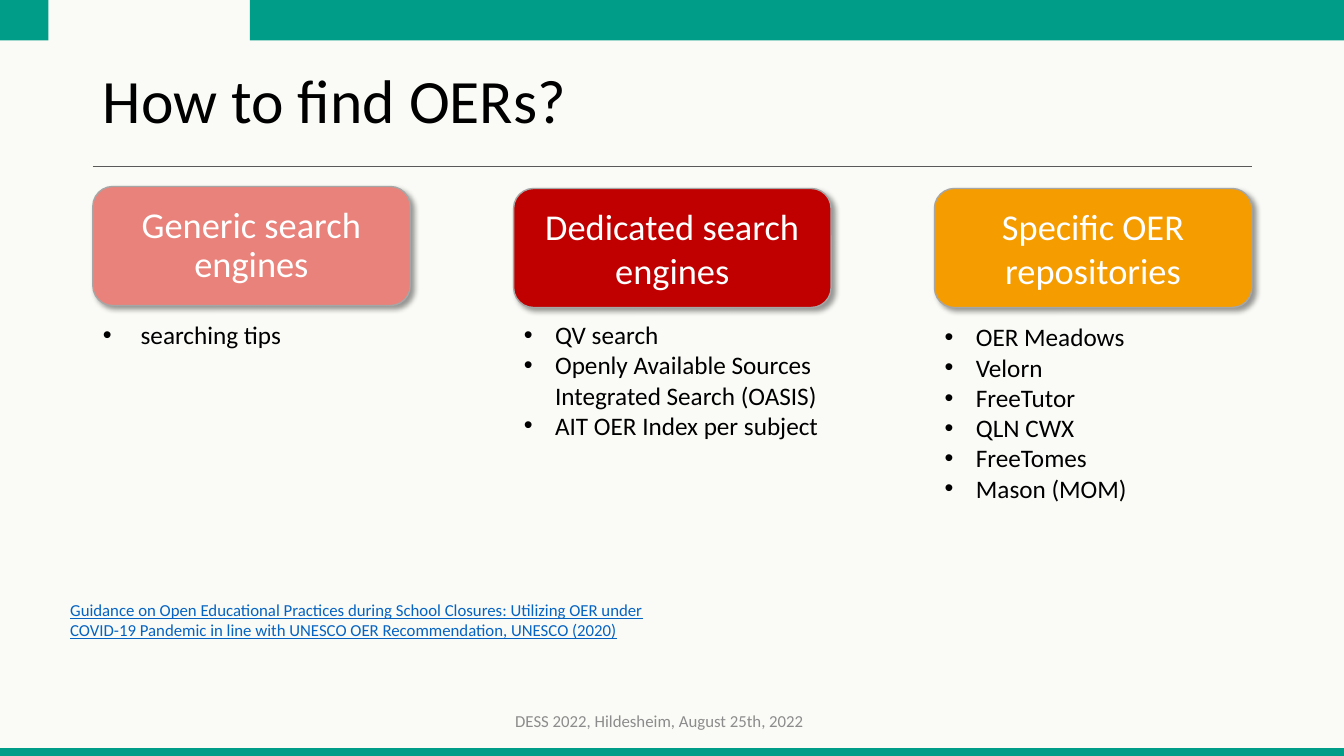
from dataclasses import dataclass

from lxml import etree
from pptx import Presentation
from pptx.dml.color import RGBColor
from pptx.enum.shapes import MSO_CONNECTOR, MSO_SHAPE
from pptx.enum.text import MSO_ANCHOR, MSO_AUTO_SIZE, PP_ALIGN
from pptx.oxml.ns import qn
from pptx.shapes.autoshape import Shape
from pptx.slide import Slide
from pptx.text.text import TextFrame
from pptx.util import Cm, Pt

RECTANGLE, ROUNDED = MSO_SHAPE.RECTANGLE, MSO_SHAPE.ROUNDED_RECTANGLE
STRAIGHT = MSO_CONNECTOR.STRAIGHT
TOP, MIDDLE = MSO_ANCHOR.TOP, MSO_ANCHOR.MIDDLE
LEFT, CENTER = PP_ALIGN.LEFT, PP_ALIGN.CENTER
NO_AUTOFIT = MSO_AUTO_SIZE.NONE

FONT = "Calibri"
PAPER = RGBColor(0xFA, 0xFA, 0xF6)
GREEN = RGBColor(0x00, 0x9D, 0x88)
RULE_GRAY = RGBColor(0x59, 0x59, 0x59)
EDGE_GRAY = RGBColor(0xA6, 0xA6, 0xA6)
FOOTER_GRAY = RGBColor(0x8C, 0x8C, 0x8C)
LINK_BLUE = RGBColor(0x05, 0x63, 0xC1)
BLACK = RGBColor(0x00, 0x00, 0x00)
WHITE = RGBColor(0xFF, 0xFF, 0xFF)
SALMON = RGBColor(0xE9, 0x82, 0x7A)
RED = RGBColor(0xC0, 0x00, 0x00)
ORANGE = RGBColor(0xF5, 0x9C, 0x00)

SLIDE_WIDTH, SLIDE_HEIGHT = 33.87, 19.05
MARGIN = 2.34
CONTENT_WIDTH = 29.21
COLUMN_WIDTH = 8.0
COLUMN_PITCH = (CONTENT_WIDTH - COLUMN_WIDTH) / 2
COMPARISON_LAYOUT = 4


@dataclass(frozen=True)
class Box:
    """Position and size in centimetres."""
    left: float
    top: float
    width: float
    height: float

    def emu(self) -> tuple[Cm, Cm, Cm, Cm]:
        return Cm(self.left), Cm(self.top), Cm(self.width), Cm(self.height)


@dataclass(frozen=True)
class Column:
    heading: str
    color: RGBColor
    items: tuple[str, ...]
    card_top: float
    list_top: float
    list_height: float
    indent: float = 0.79
    line_spacing: float = 1.0


BARS = (
    Box(0, 0, 1.22, 1.02),
    Box(6.3, 0, 27.57, 1.02),
    Box(0, 18.85, SLIDE_WIDTH, 0.2),
)

COLUMNS = (
    Column("Generic search engines", SALMON, ("searching tips",),
           4.7, 7.92, 1.02, indent=0.95, line_spacing=0.9),
    Column("Dedicated search engines", RED,
           ("QV search",
            "Openly Available Sources Integrated Search (OASIS)",
            "AIT OER Index per subject"),
           4.75, 7.92, 4.88),
    Column("Specific OER repositories", ORANGE,
           ("OER Meadows", "Velorn", "FreeTutor", "QLN CWX", "FreeTomes",
            "Mason (MOM)"),
           4.75, 7.98, 5.64),
)


def write(frame: TextFrame, lines: tuple[str, ...], size: float,
          color: RGBColor, align: PP_ALIGN = LEFT,
          anchor: MSO_ANCHOR = TOP, spacing: float = 1.0,
          bullet_indent: float = 0, underline: bool = False) -> None:
    frame.word_wrap = True
    frame.auto_size = NO_AUTOFIT
    frame.vertical_anchor = anchor
    for index, line in enumerate(lines):
        paragraph = frame.add_paragraph() if index else frame.paragraphs[0]
        paragraph.text = line
        if bullet_indent:
            properties = paragraph._p.get_or_add_pPr()
            properties.set("marL", str(Cm(bullet_indent)))
            properties.set("indent", str(-Cm(bullet_indent)))
            etree.SubElement(properties, qn("a:buFont"), typeface="Arial")
            etree.SubElement(properties, qn("a:buChar"), char="•")
        paragraph.alignment = align
        paragraph.line_spacing = spacing
        paragraph.space_before = Pt(0)
        font = paragraph.font
        font.name, font.size, font.bold = FONT, Pt(size), False
        font.underline = underline
        font.color.rgb = color


def place(shape: Shape, box: Box) -> None:
    shape.left, shape.top, shape.width, shape.height = box.emu()


def add_bar(slide: Slide, box: Box) -> None:
    bar = slide.shapes.add_shape(RECTANGLE, *box.emu())
    bar.shadow.inherit = False
    bar.fill.solid()
    bar.fill.fore_color.rgb = GREEN
    bar.line.fill.background()


def add_rule(slide: Slide, top: float) -> None:
    rule = slide.shapes.add_connector(
        STRAIGHT, Cm(MARGIN), Cm(top), Cm(MARGIN + CONTENT_WIDTH), Cm(top))
    rule.line.color.rgb = RULE_GRAY
    rule.line.width = Pt(0.5)
    etree.SubElement(rule._element.spPr, qn("a:effectLst"))


def add_drop_shadow(shape: Shape) -> None:
    """Cast a soft 40 % black shadow to the lower right."""
    effects = etree.SubElement(shape._element.spPr, qn("a:effectLst"))
    shadow = etree.SubElement(
        effects, qn("a:outerShdw"), blurRad=str(Pt(4)), dist=str(Pt(3)),
        dir=str(45 * 60000), algn="tl", rotWithShape="0")
    color = etree.SubElement(shadow, qn("a:srgbClr"), val=str(BLACK))
    etree.SubElement(color, qn("a:alpha"), val="40000")


def add_card(slide: Slide, column: Column, left: float) -> None:
    box = Box(left, column.card_top, COLUMN_WIDTH, 3)
    card = slide.shapes.add_shape(ROUNDED, *box.emu())
    card.fill.solid()
    card.fill.fore_color.rgb = column.color
    card.line.color.rgb = EDGE_GRAY
    card.line.width = Pt(1)
    add_drop_shadow(card)
    write(card.text_frame, (column.heading,), 26, WHITE, CENTER, MIDDLE,
          column.line_spacing)


def main() -> None:
    presentation = Presentation()
    presentation.slide_width = Cm(SLIDE_WIDTH)
    presentation.slide_height = Cm(SLIDE_HEIGHT)
    slide = presentation.slides.add_slide(
        presentation.slide_layouts[COMPARISON_LAYOUT])
    slide.background.fill.solid()
    slide.background.fill.fore_color.rgb = PAPER

    for bar in BARS:
        add_bar(slide, bar)
    add_rule(slide, 4.19)

    title, *bodies = slide.placeholders
    place(title, Box(MARGIN, 1.02, CONTENT_WIDTH, 3.17))
    write(title.text_frame, ("How to find OERs?",), 44, BLACK,
          anchor=MIDDLE, spacing=0.9)

    for index, (column, body) in enumerate(zip(COLUMNS, bodies)):
        left = MARGIN + index * COLUMN_PITCH
        add_card(slide, column, left)
        place(body, Box(left, column.list_top, COLUMN_WIDTH,
                        column.list_height))
        write(body.text_frame, column.items, 18, BLACK,
              bullet_indent=column.indent)
    for unused in bodies[len(COLUMNS):]:
        unused._element.getparent().remove(unused._element)

    reference = slide.shapes.add_textbox(*Box(1.52, 14.99, 16, 1.27).emu())
    write(reference.text_frame,
          ("Guidance on Open Educational Practices during School Closures: "
           "Utilizing OER under COVID-19 Pandemic in line with UNESCO OER "
           "Recommendation, UNESCO (2020)",), 12, LINK_BLUE, underline=True)

    footer = slide.shapes.add_textbox(*Box(8.38, 17.65, 16.48, 1.02).emu())
    write(footer.text_frame, ("DESS 2022, Hildesheim, August 25th, 2022",),
          12, FOOTER_GRAY, CENTER, MIDDLE)

    presentation.save("out.pptx")


if __name__ == "__main__":
    main()
